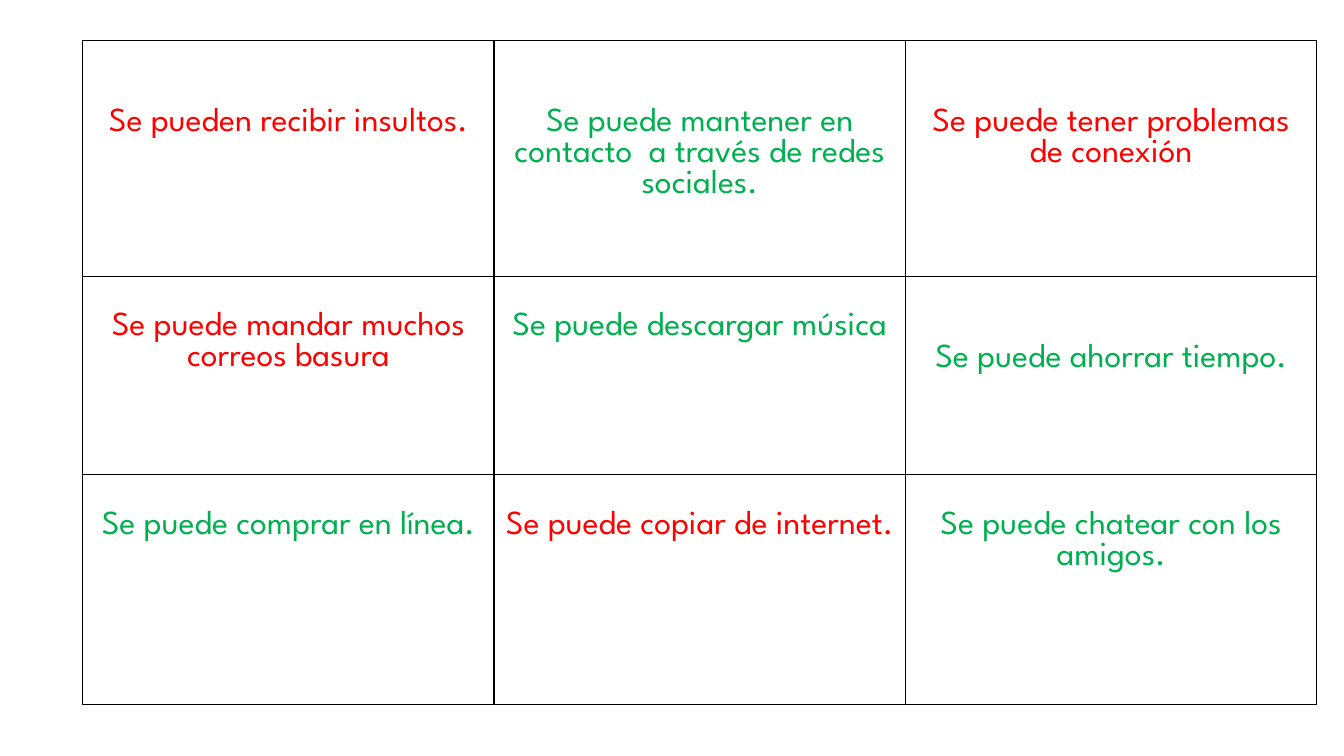
import pptx
import pptx.dml.color
import pptx.enum.text
import pptx.oxml
import pptx.oxml.ns
import pptx.util

COLORS = {"drawback": "FF0000", "benefit": "00B050", "border": "000000"}
FONT = "League Spartan"
FONT_SIZE = 24
LINE_HEIGHT = 0.31
CELL_MARGIN = 0.05
COLUMN_WIDTH = 4.08
ROW_HEIGHTS = [2.34, 1.97, 2.28]

# Each statement: wording, kind, and how many lines it sits below the cell top
STATEMENTS = [
    [
        ("Se pueden recibir insultos.", "drawback", 2),
        ("Se puede mantener en contacto  a través de redes sociales.", "benefit", 2),
        ("Se puede tener problemas de conexión", "drawback", 2),
    ],
    [
        ("Se puede mandar muchos correos basura", "drawback", 1),
        ("Se puede descargar música", "benefit", 1),
        ("Se puede ahorrar tiempo.", "benefit", 2),
    ],
    [
        ("Se puede comprar en línea.", "benefit", 1),
        ("Se puede copiar de internet.", "drawback", 1),
        ("Se puede chatear con los amigos.", "benefit", 1),
    ],
]


def draw_borders(cell, width=1):
    properties = cell._tc.get_or_add_tcPr()
    for position, side in enumerate(("lnL", "lnR", "lnT", "lnB")):
        line = pptx.oxml.parse_xml(
            f'<a:{side} {pptx.oxml.ns.nsdecls("a")} w="{pptx.util.Pt(width)}">'
            f'<a:solidFill><a:srgbClr val="{COLORS["border"]}"/></a:solidFill>'
            f'</a:{side}>'
        )
        properties.insert(position, line)


def fill_cell(cell, wording, kind, lines_down):
    cell.fill.background()
    draw_borders(cell)
    cell.margin_top = pptx.util.Inches(CELL_MARGIN + lines_down * LINE_HEIGHT)
    para = cell.text_frame.paragraphs[0]
    para.text = wording
    para.alignment = pptx.enum.text.PP_ALIGN.CENTER
    para.font.name = FONT
    para.font.size = pptx.util.Pt(FONT_SIZE)
    para.font.bold = False
    para.font.color.rgb = pptx.dml.color.RGBColor.from_string(COLORS[kind])


def add_statement_table(page, left, top):
    column_count = len(STATEMENTS[0])
    box = [left, top, column_count * COLUMN_WIDTH, sum(ROW_HEIGHTS)]
    table = page.shapes.add_table(
        len(STATEMENTS), column_count, *map(pptx.util.Inches, box)
    ).table
    table.first_row = False
    table.horz_banding = False
    for column in table.columns:
        column.width = pptx.util.Inches(COLUMN_WIDTH)
    for row, height, statements in zip(table.rows, ROW_HEIGHTS, STATEMENTS):
        row.height = pptx.util.Inches(height)
        for cell, statement in zip(row.cells, statements):
            fill_cell(cell, *statement)


def main():
    deck = pptx.Presentation()
    deck.slide_width = pptx.util.Inches(13.33)
    deck.slide_height = pptx.util.Inches(7.5)
    page = deck.slides.add_slide(deck.slide_layouts[6])
    add_statement_table(page, left=0.82, top=0.4)
    deck.save("out.pptx")


if __name__ == "__main__":
    main()
